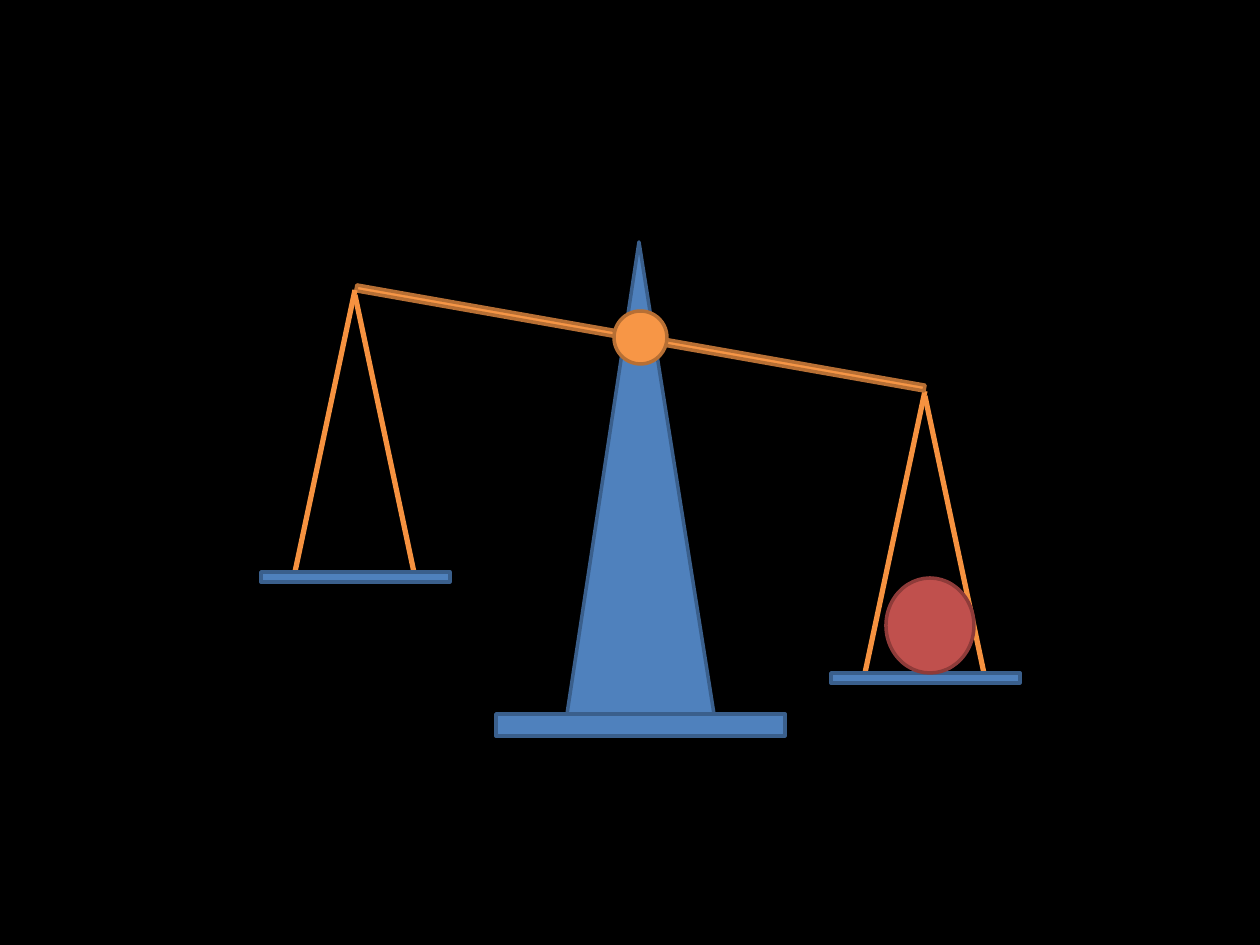
from dataclasses import dataclass

from lxml import etree
from pptx import Presentation
from pptx.dml.color import RGBColor
from pptx.enum.shapes import MSO_CONNECTOR, MSO_SHAPE
from pptx.oxml.ns import qn
from pptx.slide import Slide
from pptx.util import Emu, Pt

RECTANGLE = MSO_SHAPE.RECTANGLE
OVAL = MSO_SHAPE.OVAL
TRIANGLE = MSO_SHAPE.ISOSCELES_TRIANGLE
STRAIGHT = MSO_CONNECTOR.STRAIGHT

PX_PER_INCH = 126
BLACK = "000000"
STRING_ORANGE = "F69240"
BLUE = ("4F81BD", "3A5F8C")
ORANGE = ("F79646", "B76F34")
RED = ("C0504D", "8E3B39")

TILT = 10
PAN_WIDTH, PAN_HEIGHT = 189, 10
STRING_SPREAD, STRING_DROP, STRING_STAGGER = 60, 282, 5


@dataclass(frozen=True)
class Part:
    kind: MSO_SHAPE
    left: int
    top: int
    width: int
    height: int
    colors: tuple[str, str]
    rotation: int = 0
    adjustment: float | None = None


@dataclass(frozen=True)
class Hanger:
    x: int
    y: int


def px(length: int) -> Emu:
    return Emu(round(length * 914400 / PX_PER_INCH))


def color(value: str) -> RGBColor:
    return RGBColor.from_string(value)


def draw_part(slide: Slide, part: Part) -> None:
    shape = slide.shapes.add_shape(
        part.kind, px(part.left), px(part.top), px(part.width), px(part.height)
    )
    fill, outline = part.colors
    shape.shadow.inherit = False
    shape.fill.solid()
    shape.fill.fore_color.rgb = color(fill)
    shape.line.color.rgb = color(outline)
    shape.line.width = Pt(2)
    shape.rotation = part.rotation
    if part.adjustment is not None:
        shape.adjustments[0] = part.adjustment


def draw_string(slide: Slide, x: int, y: int, end_x: int, end_y: int) -> None:
    string = slide.shapes.add_connector(STRAIGHT, px(x), px(y), px(end_x), px(end_y))
    string.line.color.rgb = color(STRING_ORANGE)
    string.line.width = Pt(3)
    etree.SubElement(string._element.spPr, qn("a:effectLst"))


def draw_hanger(slide: Slide, hanger: Hanger) -> None:
    for side, start_y in ((-1, hanger.y), (1, hanger.y + STRING_STAGGER)):
        end_x = hanger.x + side * STRING_SPREAD
        draw_string(slide, hanger.x, start_y, end_x, start_y + STRING_DROP)
    pan_left = hanger.x - PAN_WIDTH // 2
    pan_top = hanger.y + STRING_DROP
    draw_part(slide, Part(RECTANGLE, pan_left, pan_top, PAN_WIDTH, PAN_HEIGHT, BLUE))


def main() -> None:
    presentation = Presentation()
    presentation.slide_width = px(1260)
    presentation.slide_height = px(945)
    slide = presentation.slides.add_slide(presentation.slide_layouts[6])
    slide.background.fill.solid()
    slide.background.fill.fore_color.rgb = color(BLACK)

    pillar = Part(TRIANGLE, 567, 242, 147, 472, BLUE, adjustment=0.49)
    base = Part(RECTANGLE, 496, 714, 289, 22, BLUE)
    beam = Part(RECTANGLE, 352, 335, 577, 6, ORANGE, rotation=TILT)
    pivot = Part(OVAL, 614, 311, 53, 53, ORANGE, rotation=TILT)
    weight = Part(OVAL, 886, 578, 88, 95, RED)

    for part in (pillar, base):
        draw_part(slide, part)
    draw_hanger(slide, Hanger(925, 391))
    for part in (beam, pivot):
        draw_part(slide, part)
    draw_hanger(slide, Hanger(355, 290))
    draw_part(slide, weight)

    presentation.save("out.pptx")


if __name__ == "__main__":
    main()
